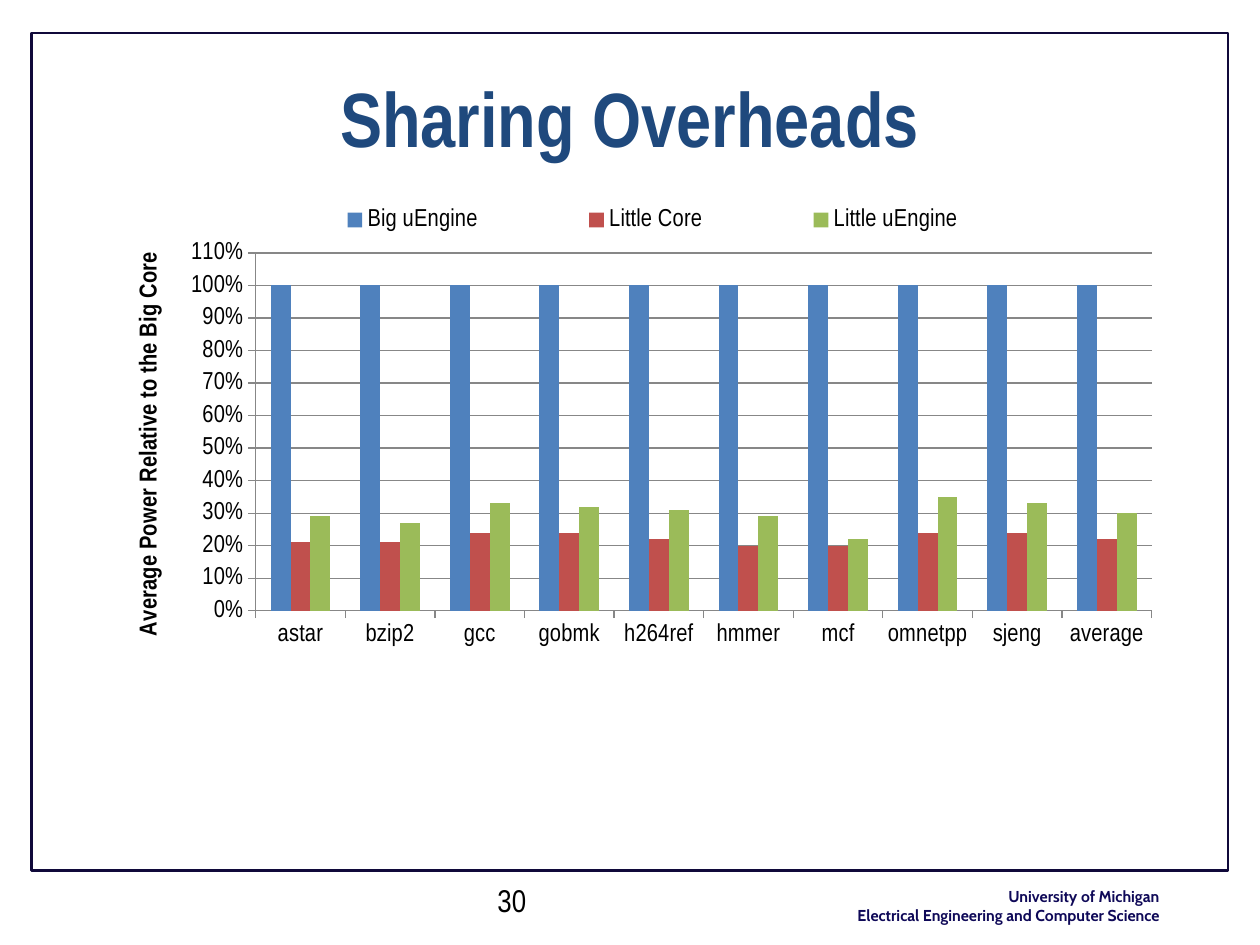
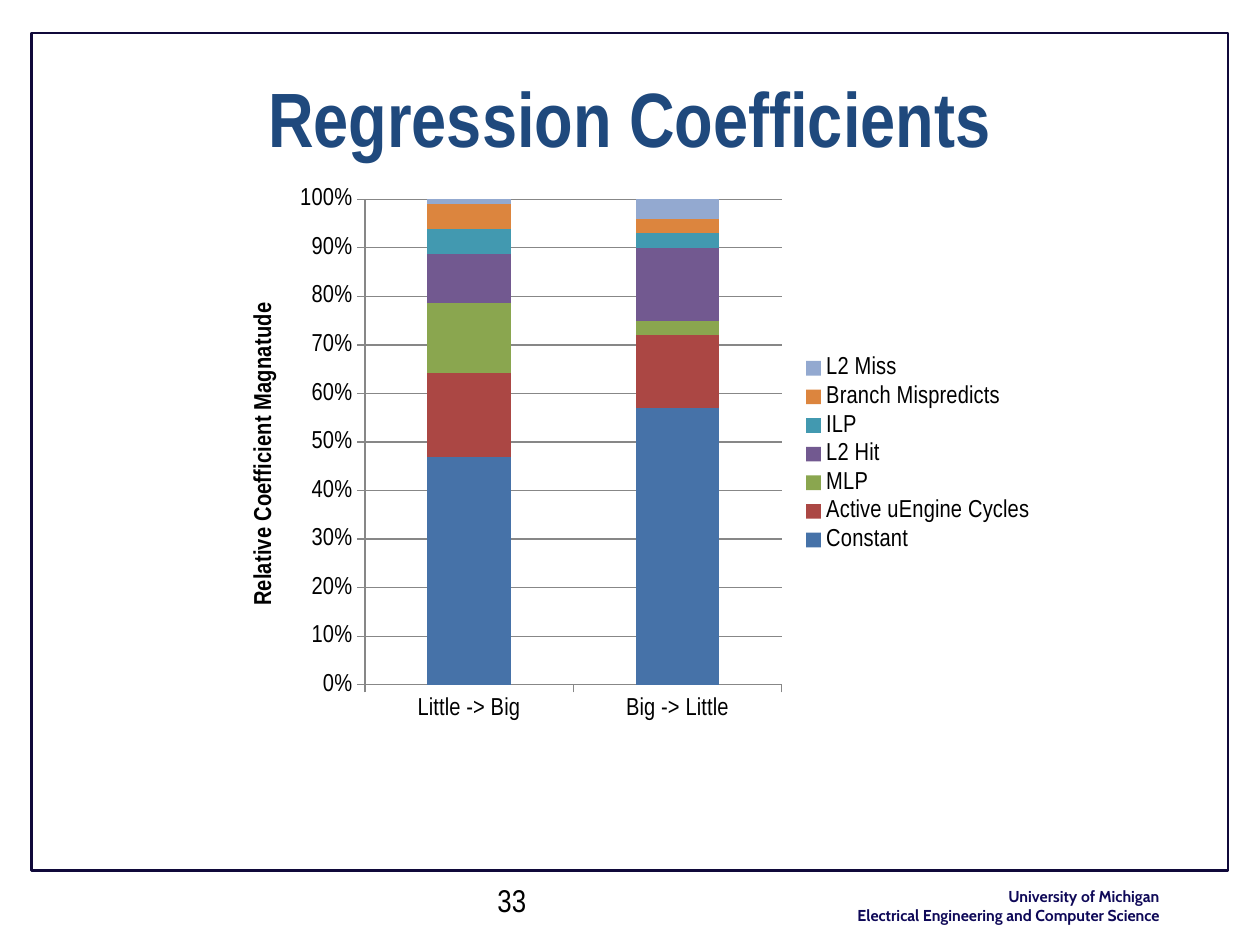
import pptx
import pptx.chart.data
import pptx.dml.color
import pptx.enum.chart
import pptx.enum.shapes
import pptx.enum.text
import pptx.oxml.ns
import pptx.oxml.xmlchemy
import pptx.util

Inches = pptx.util.Inches
Pt = pptx.util.Pt
RGBColor = pptx.dml.color.RGBColor
ChartType = pptx.enum.chart.XL_CHART_TYPE
Align = pptx.enum.text.PP_ALIGN
Anchor = pptx.enum.text.MSO_ANCHOR
qn = pptx.oxml.ns.qn
new_element = pptx.oxml.xmlchemy.OxmlElement

BLACK = RGBColor(0x00, 0x00, 0x00)
TITLE_BLUE = RGBColor(0x1F, 0x49, 0x7D)
FOOTER_NAVY = RGBColor(0x0F, 0x09, 0x58)
FRAME_NAVY = RGBColor(0x10, 0x09, 0x3A)
GRID_GRAY = RGBColor(0x87, 0x87, 0x87)
POWER_COLORS = [
    RGBColor(0x4F, 0x81, 0xBD),
    RGBColor(0xC0, 0x50, 0x4D),
    RGBColor(0x9B, 0xBB, 0x59),
]
COEFFICIENT_COLORS = [
    RGBColor(0x46, 0x72, 0xA8),
    RGBColor(0xAB, 0x47, 0x44),
    RGBColor(0x8A, 0xA6, 0x4F),
    RGBColor(0x72, 0x59, 0x90),
    RGBColor(0x42, 0x99, 0xB0),
    RGBColor(0xDC, 0x85, 0x3E),
    RGBColor(0x93, 0xA9, 0xD0),
]

FONT = "Arial Narrow"
FOOTER_FONT = "Cabin"
FOOTER_LINES = ["University of Michigan", "Electrical Engineering and Computer Science"]

BENCHMARKS = ["astar", "bzip2", "gcc", "gobmk", "h264ref", "hmmer",
              "mcf", "omnetpp", "sjeng", "average"]
POWER = {
    "Big uEngine": [1] * len(BENCHMARKS),
    "Little Core": [0.21, 0.21, 0.24, 0.24, 0.22, 0.2, 0.2, 0.24, 0.24, 0.22],
    "Little uEngine": [0.29, 0.27, 0.33, 0.32, 0.31, 0.29, 0.22, 0.35, 0.33, 0.3],
}
DIRECTIONS = ["Little -> Big", "Big -> Little"]
COEFFICIENTS = {
    "Constant": [46, 57],
    "Active uEngine Cycles": [17, 15],
    "MLP": [14, 3],
    "L2 Hit": [10, 15],
    "ILP": [5, 3],
    "Branch Mispredicts": [5, 3],
    "L2 Miss": [1, 4],
}


def place(chart, part, inner=False, **fractions):
    """Fix a chart part at x, y and optionally w, h, as fractions of the chart."""
    parent = chart.element.find(".//" + "/".join(qn(name) for name in part.split("/")))
    layout = parent.find(qn("c:layout"))
    if layout is None:
        layout = new_element("c:layout")
        parent.insert(0, layout)
    manual = new_element("c:manualLayout")
    layout.append(manual)
    settings = [("layoutTarget", "inner")] if inner else []
    settings += [("xMode", "edge"), ("yMode", "edge"), *fractions.items()]
    for name, value in settings:
        setting = new_element("c:" + name)
        setting.set("val", str(value))
        manual.append(setting)


class SlideBuilder:
    def __init__(self, deck):
        self.deck = deck
        self.slide = None

    def start(self, title, number):
        """Add a slide with the shared frame, footer, number and title."""
        self.slide = self.deck.slides.add_slide(self.deck.slide_layouts[6])
        self.text(6.4, 6.99, 2.9, 0.4, FOOTER_LINES, 9, FOOTER_NAVY, font=FOOTER_FONT,
                  bold=True, align=Align.RIGHT, wrap=False)
        self.frame(0.25, 0.26, 9.5, 6.65)
        self.text(3.85, 6.94, 2.33, 0.44, [str(number)], 18, BLACK)
        self.text(0.5, 0.3, 9, 1.25, [title], 44, TITLE_BLUE, bold=True,
                  align=Align.CENTER, anchor=Anchor.MIDDLE)

    def text(self, left, top, width, height, lines, size, color, font=FONT,
             bold=False, align=Align.LEFT, anchor=Anchor.TOP, wrap=True):
        box = self.slide.shapes.add_textbox(
            Inches(left), Inches(top), Inches(width), Inches(height))
        frame = box.text_frame
        frame.word_wrap = wrap
        frame.vertical_anchor = anchor
        for index, line in enumerate(lines):
            para = frame.add_paragraph() if index else frame.paragraphs[0]
            para.alignment = align
            span = para.add_run()
            span.text = line
            self.style(span.font, size, color, font, bold)

    def style(self, target, size, color=BLACK, font=FONT, bold=False):
        target.name = font
        target.size = Pt(size)
        target.bold = bold
        target.color.rgb = color

    def frame(self, left, top, width, height):
        border = self.slide.shapes.add_shape(
            pptx.enum.shapes.MSO_SHAPE.RECTANGLE,
            Inches(left), Inches(top), Inches(width), Inches(height))
        border.shadow.inherit = False
        border.fill.background()
        border.line.color.rgb = FRAME_NAVY
        border.line.width = Pt(1.25)

    def column_chart(self, left, top, width, height, kind, categories, series,
                     colors, axis_title, overlap=0):
        data = pptx.chart.data.CategoryChartData()
        data.categories = categories
        for name, values in series.items():
            data.add_series(name, values)
        chart = self.slide.shapes.add_chart(
            kind, Inches(left), Inches(top), Inches(width), Inches(height), data).chart
        chart.has_title = False
        self.style(chart.font, 14)

        chart.has_legend = True
        chart.legend.position = pptx.enum.chart.XL_LEGEND_POSITION.RIGHT
        chart.legend.include_in_layout = False

        plot = chart.plots[0]
        plot.gap_width = 150
        plot.overlap = overlap
        plot.vary_by_categories = False
        for bars, color in zip(plot.series, colors):
            bars.format.fill.solid()
            bars.format.fill.fore_color.rgb = color

        value_axis = chart.value_axis
        for axis in (chart.category_axis, value_axis):
            axis.major_tick_mark = pptx.enum.chart.XL_TICK_MARK.OUTSIDE
            axis.format.line.color.rgb = GRID_GRAY
        value_axis.has_major_gridlines = True
        value_axis.major_gridlines.format.line.color.rgb = GRID_GRAY
        value_axis.tick_labels.number_format = "0%"
        value_axis.tick_labels.number_format_is_linked = False
        span = value_axis.axis_title.text_frame.paragraphs[0].add_run()
        span.text = axis_title
        self.style(span.font, 14, bold=True)
        return chart


def build_sharing_overheads(builder):
    builder.start("Sharing Overheads", 30)
    chart = builder.column_chart(
        0.5, 1.44, 9, 4.37, ChartType.COLUMN_CLUSTERED, BENCHMARKS, POWER,
        POWER_COLORS, "Average Power Relative to the Big Core")
    chart.value_axis.minimum_scale = 0
    chart.value_axis.maximum_scale = 1.1
    chart.value_axis.major_unit = 0.1
    place(chart, "c:plotArea", inner=True, x=0.17, y=0.13, w=0.79, h=0.65)
    place(chart, "c:legend", x=0.16, y=0.02, w=0.72, h=0.1)
    place(chart, "c:valAx/c:title", x=0.06, y=0.12)


def build_regression_coefficients(builder):
    builder.start("Regression Coefficients", 33)
    builder.column_chart(
        1.77, 1.4, 6.55, 4.41, ChartType.COLUMN_STACKED_100, DIRECTIONS, COEFFICIENTS,
        COEFFICIENT_COLORS, "Relative Coefficient Magnatude", overlap=100)


def main():
    deck = pptx.Presentation()
    deck.slide_width = Inches(10)
    deck.slide_height = Inches(7.5)
    builder = SlideBuilder(deck)
    build_sharing_overheads(builder)
    build_regression_coefficients(builder)
    deck.save("out.pptx")


if __name__ == "__main__":
    main()
